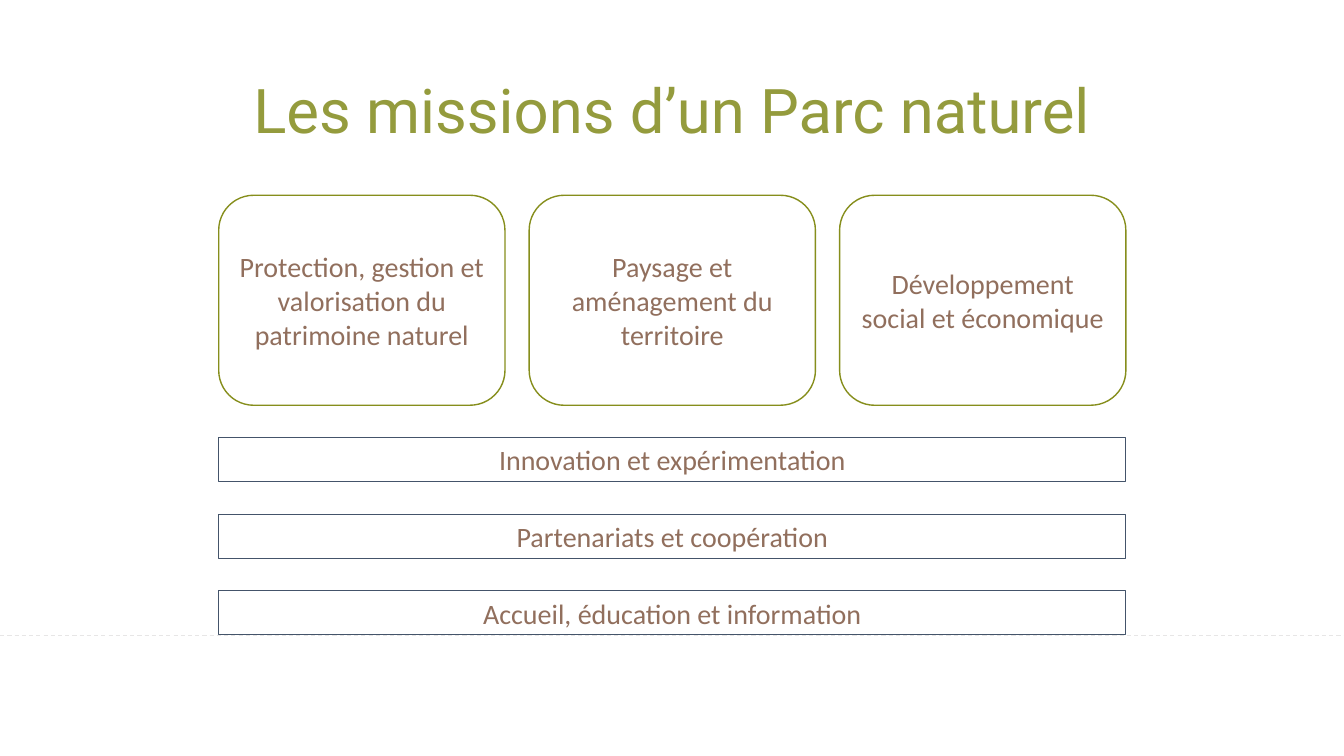
from pptx import Presentation
from pptx.dml.color import RGBColor
from pptx.enum import dml, shapes, text
from pptx.oxml.ns import qn
from pptx.util import Pt

GREEN, BROWN, SLATE = "949B3D", "916F5D", "44546A"
LEFT, WIDTH = 156.25, 648
PILLAR_WIDTH, PILLAR_TOP, PILLAR_HEIGHT = 204.5, 139.5, 150
BAR_TOP, BAR_HEIGHT, BAR_PITCH = 312.5, 31.5, 54.75

pillars = [
    "Protection, gestion et valorisation du patrimoine naturel",
    "Paysage et aménagement du territoire",
    "Développement social et économique",
]
bars = [
    "Innovation et expérimentation",
    "Partenariats et coopération",
    "Accueil, éducation et information",
]


def color(value):
    return RGBColor.from_string(value)


def add_box(kind, left, top, width, height, outline, weight, wording):
    """Add a white outlined shape with centred brown text."""
    box = slide.shapes.add_shape(kind, Pt(left), Pt(top), Pt(width), Pt(height))
    box.shadow.inherit = False
    box.fill.solid()
    box.fill.fore_color.rgb = color("FFFFFF")
    box.line.color.rgb = color(outline)
    box.line.width = Pt(weight)
    frame = box.text_frame
    frame.word_wrap = True
    frame.vertical_anchor = text.MSO_ANCHOR.MIDDLE
    para = frame.paragraphs[0]
    para.alignment = text.PP_ALIGN.CENTER
    span = para.add_run()
    span.text = wording
    span.font.name = "Calibri"
    span.font.size = Pt(20)
    span.font.color.rgb = color(BROWN)


deck = Presentation()
deck.slide_width, deck.slide_height = Pt(960), Pt(540)
slide = deck.slides.add_slide(deck.slide_layouts[5])

# Dashed guide behind the last bar
guide = slide.shapes.add_connector(
    shapes.MSO_CONNECTOR.STRAIGHT, Pt(-5), Pt(454), Pt(965), Pt(454))
guide.line.color.rgb = color("E7E6E6")
guide.line.width = Pt(0.75)
guide.line.dash_style = dml.MSO_LINE.DASH
properties = guide._element.spPr
properties.append(properties.makeelement(qn("a:effectLst"), {}))

# Title
title = slide.shapes.title
title.left, title.top, title.width, title.height = Pt(66), Pt(29), Pt(828), Pt(104.5)
title.text_frame.vertical_anchor = text.MSO_ANCHOR.MIDDLE
para = title.text_frame.paragraphs[0]
para.alignment = text.PP_ALIGN.CENTER
para.line_spacing = 0.9
span = para.add_run()
span.text = "Les missions d’un Parc naturel"
span.font.name = "Roboto"
span.font.size = Pt(44)
span.font.color.rgb = color(GREEN)

# Three pillars, then three full-width bars
pillar_pitch = (WIDTH - PILLAR_WIDTH) / 2
for index, wording in enumerate(pillars):
    add_box(shapes.MSO_SHAPE.ROUNDED_RECTANGLE, LEFT + index * pillar_pitch, PILLAR_TOP,
            PILLAR_WIDTH, PILLAR_HEIGHT, "868E1C", 1, wording)
for index, wording in enumerate(bars):
    add_box(shapes.MSO_SHAPE.RECTANGLE, LEFT, BAR_TOP + index * BAR_PITCH,
            WIDTH, BAR_HEIGHT, SLATE, 0.75, wording)

deck.save("out.pptx")
